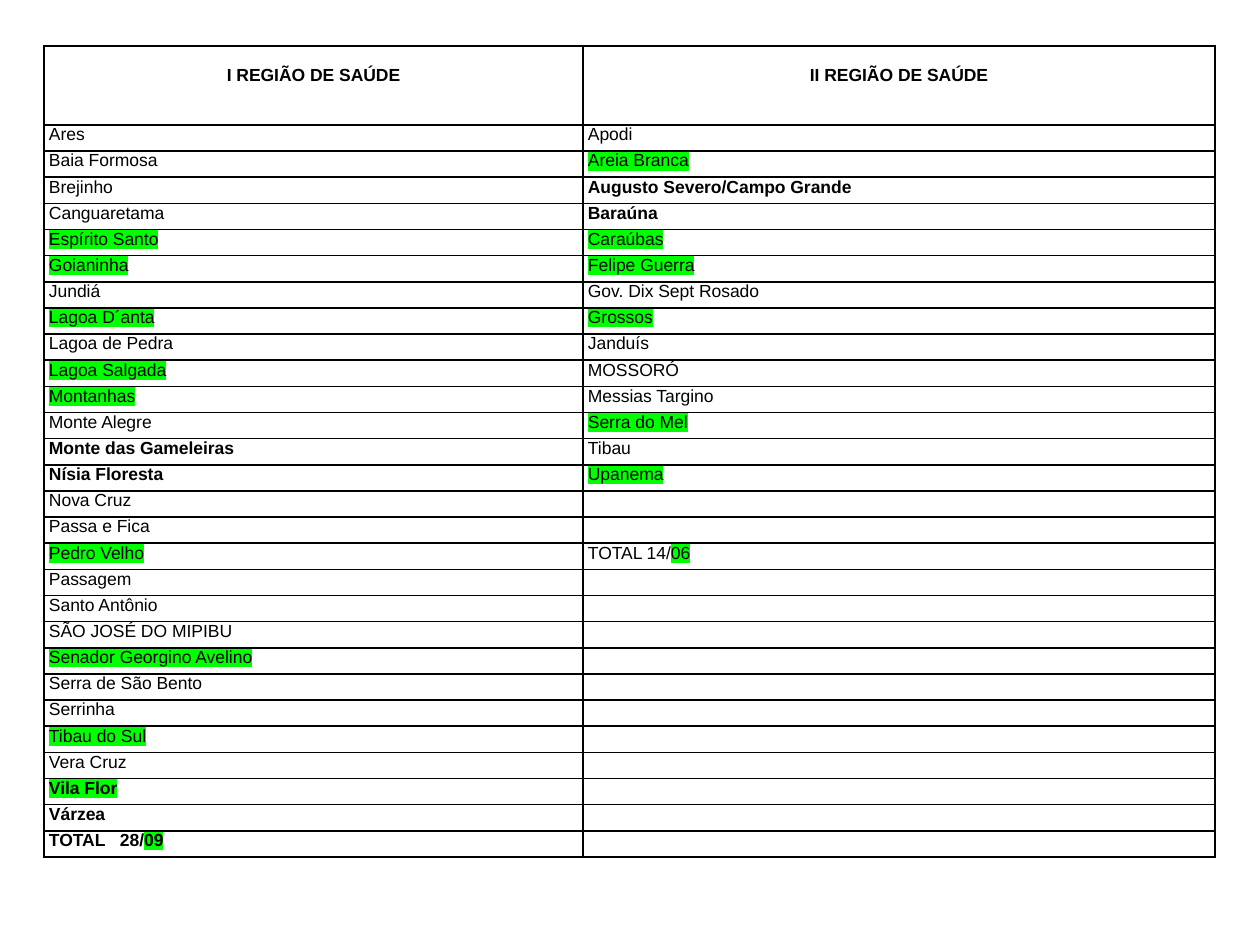
"""Build a slide listing the municipalities of two health regions."""
from dataclasses import dataclass
from itertools import zip_longest

from lxml.etree import SubElement
from pptx import Presentation
from pptx.dml.color import RGBColor
from pptx.enum.text import PP_ALIGN
from pptx.oxml import parse_xml
from pptx.oxml.ns import nsdecls, qn
from pptx.util import Pt

PX = 914400 / 126


@dataclass(frozen=True)
class Theme:
    font: str = "Arial"
    size: int = 10
    ink: str = "000000"
    mark: str = "00FF00"
    border: int = 1


@dataclass(frozen=True)
class Entry:
    text: str = ""
    bold: bool = False
    marked: bool = False
    tail: str = ""


THEME = Theme()
LEFT, TOP, HEIGHT, HEADER = 44, 46, 812, 79
COLUMNS = (539, 632)
INSET, HEADER_INSET, TAB = 5, 20, 71
HEADINGS = (Entry("I REGIÃO DE SAÚDE", bold=True), Entry("II REGIÃO DE SAÚDE", bold=True))
REGION_1 = (
    Entry("Ares"),
    Entry("Baia Formosa"),
    Entry("Brejinho"),
    Entry("Canguaretama"),
    Entry("Espírito Santo", marked=True),
    Entry("Goianinha", marked=True),
    Entry("Jundiá"),
    Entry("Lagoa D´anta", marked=True),
    Entry("Lagoa de Pedra"),
    Entry("Lagoa Salgada", marked=True),
    Entry("Montanhas", marked=True),
    Entry("Monte Alegre"),
    Entry("Monte das Gameleiras", bold=True),
    Entry("Nísia Floresta", bold=True),
    Entry("Nova Cruz"),
    Entry("Passa e Fica"),
    Entry("Pedro Velho", marked=True),
    Entry("Passagem"),
    Entry("Santo Antônio"),
    Entry("SÃO JOSÉ DO MIPIBU"),
    Entry("Senador Georgino Avelino", marked=True),
    Entry("Serra de São Bento"),
    Entry("Serrinha"),
    Entry("Tibau do Sul", marked=True),
    Entry("Vera Cruz"),
    Entry("Vila Flor", bold=True, marked=True),
    Entry("Várzea", bold=True),
    Entry("TOTAL\t28/", bold=True, tail="09"),
)
REGION_2 = (
    Entry("Apodi"),
    Entry("Areia Branca", marked=True),
    Entry("Augusto Severo/Campo Grande", bold=True),
    Entry("Baraúna", bold=True),
    Entry("Caraúbas", marked=True),
    Entry("Felipe Guerra", marked=True),
    Entry("Gov. Dix Sept Rosado"),
    Entry("Grossos", marked=True),
    Entry("Janduís"),
    Entry("MOSSORÓ"),
    Entry("Messias Targino"),
    Entry("Serra do Mel", marked=True),
    Entry("Tibau"),
    Entry("Upanema", marked=True),
    Entry(),
    Entry(),
    Entry("TOTAL 14/", tail="06"),
)


def px(value: float) -> int:
    return round(value * PX)


def format_run(r, bold: bool, marked: bool) -> None:
    r.font.size = Pt(THEME.size)
    r.font.bold = bold
    r.font.color.rgb = RGBColor.from_string(THEME.ink)
    if marked:
        highlight = SubElement(r.font._element, qn("a:highlight"))
        SubElement(highlight, qn("a:srgbClr"), val=THEME.mark)
    r.font.name = THEME.font


def draw_borders(cell) -> None:
    tc_pr = cell._tc.get_or_add_tcPr()
    for i, side in enumerate("LRTB"):
        tc_pr.insert(i, parse_xml(
            f'<a:ln{side} {nsdecls("a")} w="{Pt(THEME.border)}"><a:solidFill>'
            f'<a:srgbClr val="{THEME.ink}"/></a:solidFill></a:ln{side}>'))


def write_entry(p, entry: Entry) -> None:
    if not entry.text:
        SubElement(p._p, qn("a:endParaRPr"), sz=str(THEME.size * 100))
        return
    p.text = entry.text
    format_run(p.runs[0], entry.bold, entry.marked)
    if entry.tail:
        r = p.add_run()
        r.text = entry.tail
        format_run(r, entry.bold, True)
    if "\t" in entry.text:
        tabs = SubElement(p._p.get_or_add_pPr(), qn("a:tabLst"))
        SubElement(tabs, qn("a:tab"), pos=str(px(TAB)), algn="l")


def fill_cell(cell, entry: Entry, heading: bool) -> None:
    cell.margin_left = cell.margin_right = px(INSET)
    cell.margin_top = px(HEADER_INSET if heading else 0)
    cell.margin_bottom = 0
    cell.fill.background()
    draw_borders(cell)
    p = cell.text_frame.paragraphs[0]
    write_entry(p, entry)
    p.alignment = PP_ALIGN.CENTER if heading else PP_ALIGN.LEFT


def draw_regions(s) -> None:
    rows = [HEADINGS, *zip_longest(REGION_1, REGION_2, fillvalue=Entry())]
    table = s.shapes.add_table(len(rows), len(COLUMNS), px(LEFT), px(TOP),
                               px(sum(COLUMNS)), px(HEIGHT)).table
    table.first_row = table.horz_banding = False
    for column, width in zip(table.columns, COLUMNS):
        column.width = px(width)
    row_height = (HEIGHT - HEADER) / (len(rows) - 1)
    for i, entries in enumerate(rows):
        table.rows[i].height = px(row_height if i else HEADER)
        for j, entry in enumerate(entries):
            fill_cell(table.cell(i, j), entry, heading=i == 0)


def main() -> None:
    prs = Presentation()
    prs.slide_width, prs.slide_height = px(1260), px(945)
    draw_regions(prs.slides.add_slide(prs.slide_layouts[6]))
    prs.save("out.pptx")


if __name__ == "__main__":
    main()
